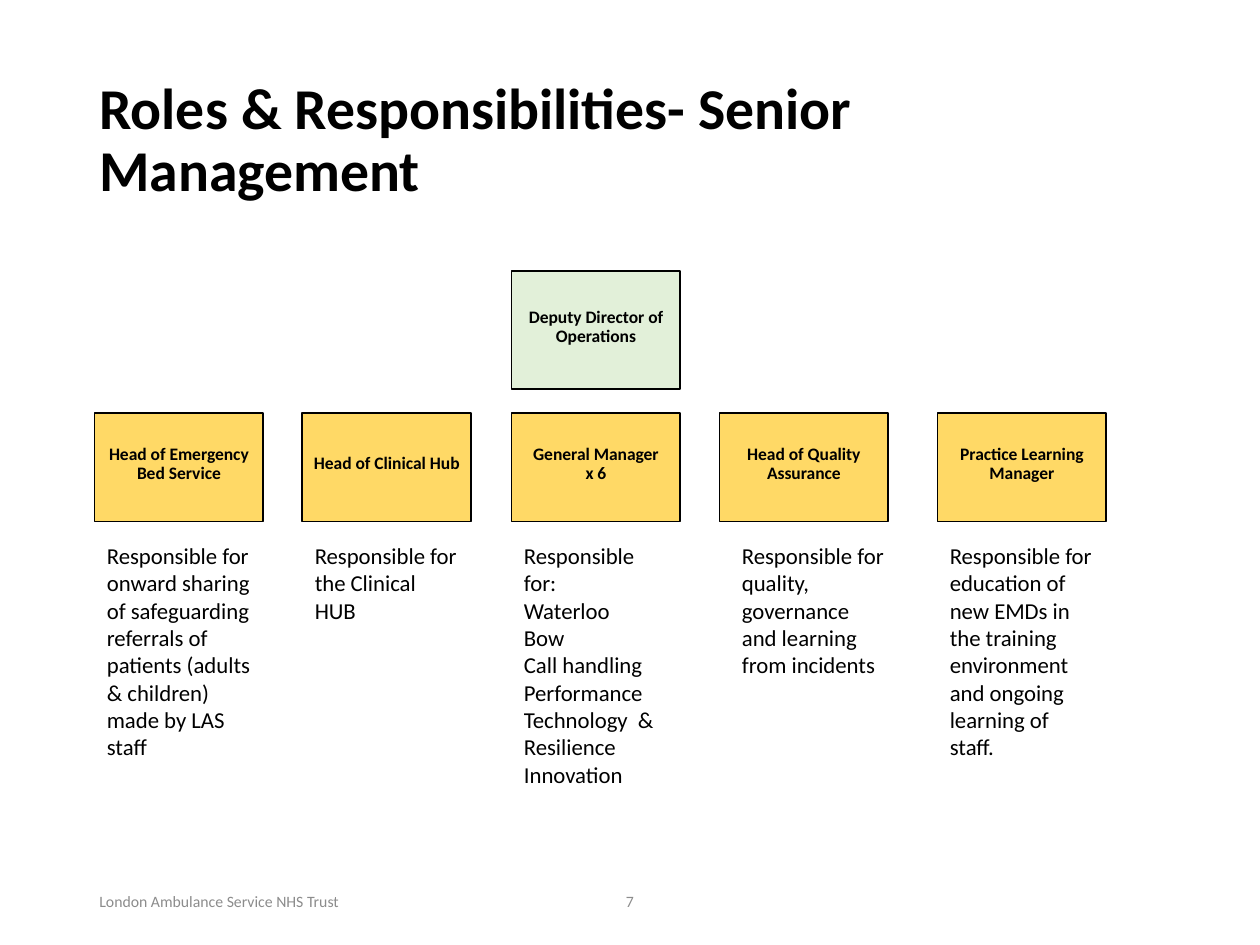
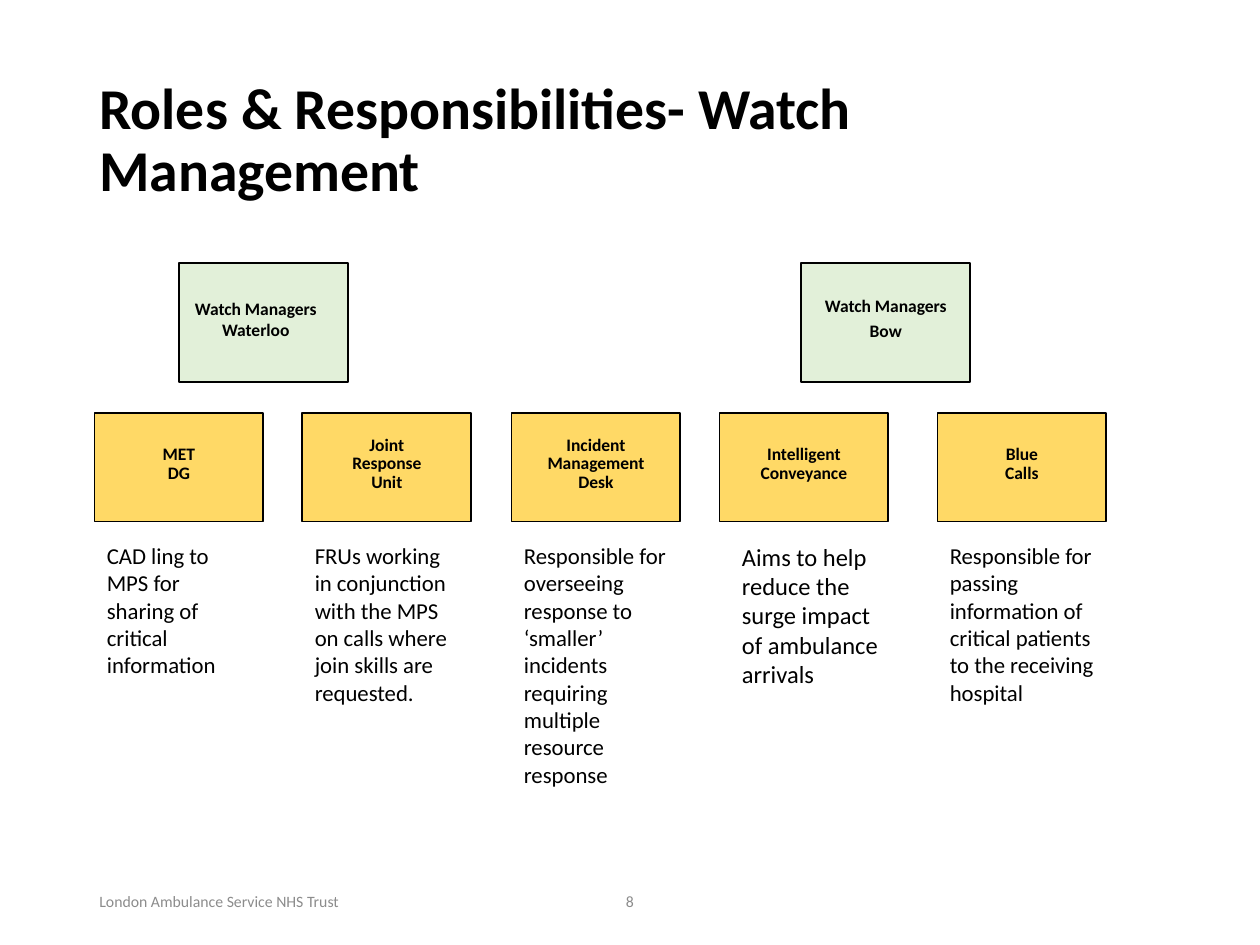
from collections import namedtuple

from pptx import Presentation
from pptx.dml.color import RGBColor
from pptx.enum.shapes import MSO_SHAPE
from pptx.enum.text import MSO_ANCHOR as Anchor, MSO_AUTO_SIZE as AutoSize, PP_ALIGN as Align
from pptx.util import Inches, Pt

FONT = "Calibri"
BLACK = RGBColor(0x00, 0x00, 0x00)
GREY = RGBColor(0x8C, 0x8C, 0x8C)
GREEN = RGBColor(0xE2, 0xF0, 0xD9)
YELLOW = RGBColor(0xFF, 0xD9, 0x66)

BOX_WIDTH = 1.34
LEAD_HEIGHT = 0.94
ROLE_TOP, ROLE_HEIGHT = 3.28, 0.86
DUTY_TOP = 4.25
COLUMN_LEFTS = [0.75, 2.4, 4.06, 5.71, 7.44]
DUTY_SHIFTS = [0, 0, 0, 0.08, 0]

# A role holds its box text, its duty text, the lines the duty box is high and its text size
Role = namedtuple("Role", "name duty lines size", defaults=[13])
Lead = namedtuple("Lead", "name left top spacing after right_inset", defaults=[0.9, 3.5, 0])

SENIOR_LEADS = [Lead("Deputy Director of Operations", 4.06, 2.15)]
SENIOR_ROLES = [
    Role("Head of Emergency Bed Service",
         "Responsible for onward sharing of safeguarding referrals of patients "
         "(adults & children) made by LAS staff", 9),
    Role("Head of Clinical Hub", "Responsible for the Clinical HUB", 3),
    Role("General Manager\nx 6",
         "Responsible for:\nWaterloo\nBow\nCall handling\nPerformance\n"
         "Technology  & Resilience\nInnovation", 9),
    Role("Head of Quality Assurance",
         "Responsible for quality, governance and learning from incidents", 5),
    Role("Practice Learning Manager",
         "Responsible for education of new EMDs in the training environment "
         "and ongoing learning of staff.", 8),
]

WATCH_LEADS = [
    Lead("Watch Managers Waterloo", 1.42, 2.09, 1.0, 0, 0.12),
    Lead("Watch Managers\nBow", 6.36, 2.09),
]
WATCH_ROLES = [
    Role("MET\nDG", "CAD ling to MPS for sharing of critical information", 5),
    Role("Joint\nResponse\nUnit",
         "FRUs working in conjunction with the MPS on calls where join skills "
         "are requested.", 6),
    Role("Incident\nManagement\nDesk",
         "Responsible for overseeing response to ‘smaller’ incidents requiring "
         "multiple resource response", 9),
    Role("Intelligent\nConveyance",
         "Aims to help reduce the surge impact of ambulance arrivals", 5, 14),
    Role("Blue\nCalls",
         "Responsible for passing information of critical patients to the "
         "receiving hospital", 7),
]


def write(tf, text, size, color=BLACK, bold=False, align=Align.LEFT, spacing=1.0, after=0):
    tf.word_wrap = True
    tf.text = text
    for p in tf.paragraphs:
        p.alignment = align
        p.line_spacing = spacing
        p.space_after = Pt(after)
        for r in p.runs:
            r.font.name = FONT
            r.font.size = Pt(size)
            r.font.bold = bold
            r.font.color.rgb = color


def add_text(slide, box, text, size, anchor=Anchor.MIDDLE, **style):
    sp = slide.shapes.add_textbox(*map(Inches, box))
    sp.text_frame.vertical_anchor = anchor
    write(sp.text_frame, text, size, **style)
    return sp


def add_role_box(slide, box, text, fill, right_inset=0, **style):
    sp = slide.shapes.add_shape(MSO_SHAPE.RECTANGLE, *map(Inches, box))
    sp.shadow.inherit = False
    sp.fill.solid()
    sp.fill.fore_color.rgb = fill
    sp.line.color.rgb = BLACK
    sp.line.width = Pt(1)
    tf = sp.text_frame
    tf.vertical_anchor = Anchor.MIDDLE
    tf.margin_left = tf.margin_top = 0
    tf.margin_right = Inches(right_inset)
    tf.margin_bottom = Inches(0.05)
    write(tf, text, 10, bold=True, align=Align.CENTER, **style)


def add_column(slide, left, role, duty_shift):
    """Place a role box with its duty text below."""
    add_role_box(slide, (left, ROLE_TOP, BOX_WIDTH, ROLE_HEIGHT), role.name, YELLOW, spacing=0.9)
    height = 0.1 + role.lines * role.size * 1.21 / 72
    sp = add_text(slide, (left + duty_shift, DUTY_TOP, BOX_WIDTH, height),
                  role.duty, role.size, anchor=Anchor.TOP)
    sp.text_frame.auto_size = AutoSize.SHAPE_TO_FIT_TEXT


def add_frame(slide, title, number):
    """Place the title, the footer and the page number."""
    add_text(slide, (0.69, 0.4, 8.62, 1.45), title, 33, bold=True, spacing=0.9)
    add_text(slide, (0.69, 6.95, 2.25, 0.4), "London Ambulance Service NHS Trust", 9, color=GREY)
    add_text(slide, (3.31, 6.95, 3.38, 0.4), str(number), 9, color=GREY, align=Align.CENTER)


def add_roles_slide(prs, number, title, leads, roles):
    slide = prs.slides.add_slide(prs.slide_layouts[6])
    add_frame(slide, title, number)
    for lead in leads:
        add_role_box(slide, (lead.left, lead.top, BOX_WIDTH, LEAD_HEIGHT), lead.name, GREEN,
                     lead.right_inset, spacing=lead.spacing, after=lead.after)
    for left, role, shift in zip(COLUMN_LEFTS, roles, DUTY_SHIFTS):
        add_column(slide, left, role, shift)


def main():
    prs = Presentation()
    prs.slide_width, prs.slide_height = Inches(10), Inches(7.5)
    add_roles_slide(prs, 7, "Roles & Responsibilities- Senior Management",
                    SENIOR_LEADS, SENIOR_ROLES)
    add_roles_slide(prs, 8, "Roles & Responsibilities- Watch Management",
                    WATCH_LEADS, WATCH_ROLES)
    prs.save("out.pptx")


if __name__ == "__main__":
    main()
